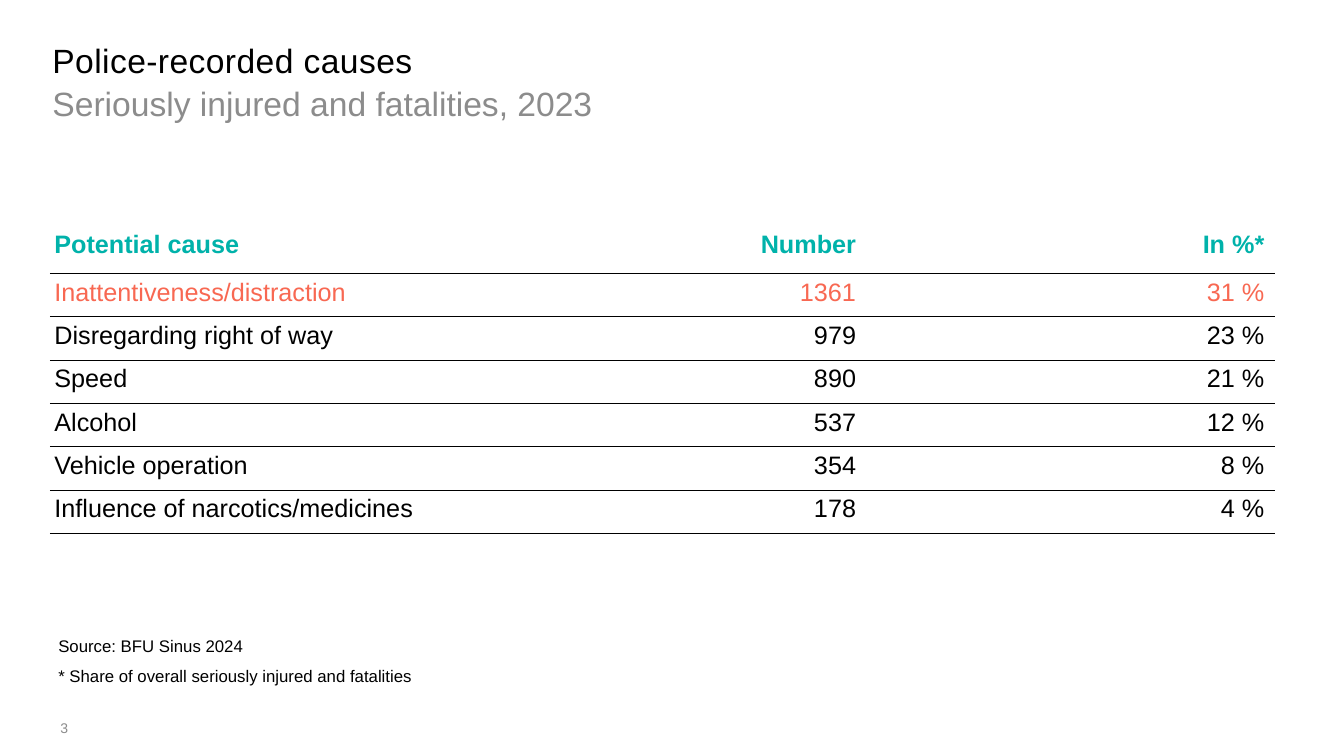
from lxml.etree import SubElement
from pptx import Presentation
from pptx.dml.color import RGBColor
from pptx.enum.text import MSO_ANCHOR, PP_ALIGN
from pptx.oxml import parse_xml
from pptx.oxml.ns import nsdecls
from pptx.util import Inches, Pt

BLACK = RGBColor(0x00, 0x00, 0x00)
GRAY = RGBColor(0x8C, 0x8C, 0x8C)
TEAL = RGBColor(0x00, 0xB2, 0xAA)
CORAL = RGBColor(0xF8, 0x68, 0x52)

COLUMN_WIDTHS = (6.43, 1.66, 4.05)
HEADER_HEIGHT = 0.47
ROW_HEIGHT = 0.43
CAUSES = (
    ("Potential cause", "Number", "In %*"),
    ("Inattentiveness/distraction", "1361", "31 %"),
    ("Disregarding right of way", "979", "23 %"),
    ("Speed", "890", "21 %"),
    ("Alcohol", "537", "12 %"),
    ("Vehicle operation", "354", "8 %"),
    ("Influence of narcotics/medicines", "178", "4 %"),
)


class SlideBuilder:
    """Adds text and ruled tables in one style to the current slide."""

    font_name = "Arial"
    rule_width = Pt(0.5)

    def __init__(self, slide):
        self.slide = slide

    def span(self, para, text, size, color, bold=False, tracking=0):
        span = para.add_run()
        span.text = text
        span.font.name = self.font_name
        span.font.size = Pt(size)
        span.font.bold = bold
        span.font.color.rgb = color
        if tracking:
            span.font._element.set("spc", str(tracking))

    def text(self, place, lines, size, color, inset=(0, 0), spacing=None, after=0, tracking=0):
        box = self.slide.shapes.add_textbox(*map(Inches, place))
        frame = box.text_frame
        frame.word_wrap = True
        frame.margin_left = frame.margin_right = Inches(inset[0])
        frame.margin_top = frame.margin_bottom = Inches(inset[1])
        for index, line in enumerate(lines):
            para = frame.add_paragraph() if index else frame.paragraphs[0]
            para.line_spacing = spacing
            para.space_after = Pt(after)
            self.span(para, line, size, color, tracking=tracking)

    def rule(self, cell, edge, position):
        line = parse_xml(f'<a:{edge} {nsdecls("a")} w="{self.rule_width}"/>')
        namespace = line.nsmap["a"]
        fill = SubElement(line, f"{{{namespace}}}solidFill")
        SubElement(fill, f"{{{namespace}}}srgbClr", val=str(BLACK))
        cell._tc.get_or_add_tcPr().insert(position, line)

    def cell(self, cell, text, color, bold, align, below_rule):
        cell.margin_left, cell.margin_right = Inches(0.04), Inches(0.1)
        cell.margin_top = cell.margin_bottom = Inches(0.05)
        cell.vertical_anchor = MSO_ANCHOR.TOP
        cell.fill.background()
        self.rule(cell, "lnB", 0)
        if below_rule:
            self.rule(cell, "lnT", 0)
        para = cell.text_frame.paragraphs[0]
        para.alignment = align
        self.span(para, text, 18, color, bold)

    def table(self, left, top, widths, rows):
        heights = [HEADER_HEIGHT] + [ROW_HEIGHT] * (len(rows) - 1)
        place = map(Inches, (left, top, sum(widths), sum(heights)))
        table = self.slide.shapes.add_table(len(rows), len(widths), *place).table
        table.first_row = table.horz_banding = False
        for column, width in zip(table.columns, widths):
            column.width = Inches(width)
        for row, height in zip(table.rows, heights):
            row.height = Inches(height)
        row_colors = {0: TEAL, 1: CORAL}
        for row_index, row in enumerate(rows):
            color = row_colors.get(row_index, BLACK)
            for column_index, text in enumerate(row):
                align = PP_ALIGN.RIGHT if column_index else PP_ALIGN.LEFT
                cell = table.cell(row_index, column_index)
                self.cell(cell, text, color, row_index == 0, align, row_index > 0)


def main():
    deck = Presentation()
    deck.slide_width, deck.slide_height = Inches(13.33), Inches(7.5)
    page = SlideBuilder(deck.slides.add_slide(deck.slide_layouts[6]))
    page.text((0.52, 0.4, 12.28, 0.35), ["Police-recorded causes"], 24, BLACK, tracking=30)
    page.text((0.6, 7.14, 0.89, 0.18), ["3"], 10, GRAY)
    page.text((0.52, 0.8, 12.28, 0.39), ["Seriously injured and fatalities, 2023"],
              24, GRAY, spacing=1.05, after=12)
    page.table(0.5, 2.24, COLUMN_WIDTHS, CAUSES)
    page.text((0.48, 6.25, 12.43, 0.59),
              ["Source: BFU Sinus 2024", "* Share of overall seriously injured and fatalities"],
              12, BLACK, inset=(0.1, 0.05), spacing=1.05, after=6)
    deck.save("out.pptx")


if __name__ == "__main__":
    main()
